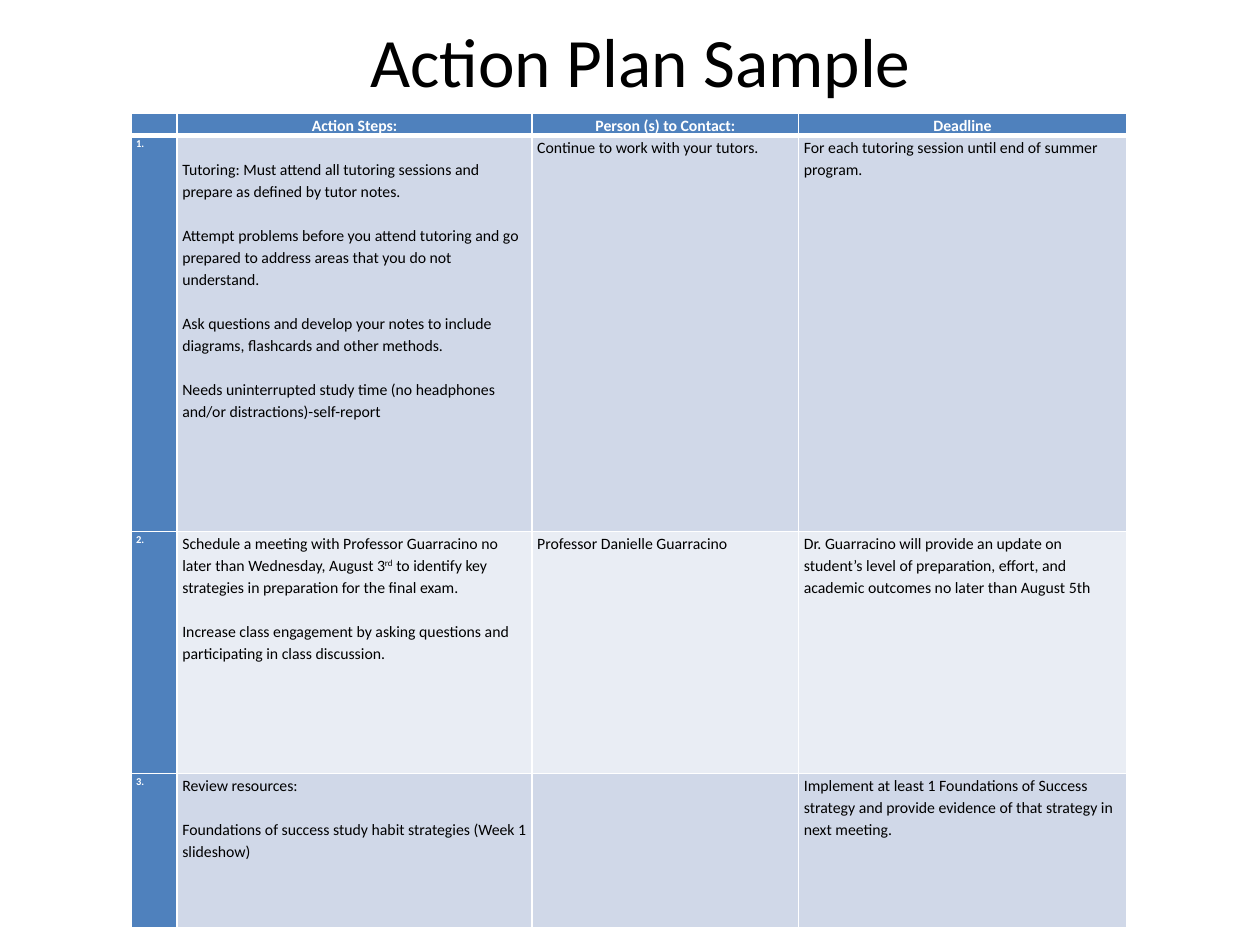
from lxml import etree
from pptx import Presentation
from pptx import util as u
from pptx.dml.color import RGBColor
from pptx.enum import text
from pptx.oxml.ns import qn

Pt = u.Pt
BLACK = RGBColor(0x00, 0x00, 0x00)
WHITE = RGBColor(0xFF, 0xFF, 0xFF)
BLUE = RGBColor(0x4F, 0x81, 0xBD)
BAND_DARK = RGBColor(0xD0, 0xD8, 0xE8)
BAND_LIGHT = RGBColor(0xE9, 0xED, 0xF4)

FONT = "Calibri"
LINE = 12.57  # height of one 9 pt line at 1.15 spacing
COL_WIDTHS = (26.4, 202.8, 152.4, 187.2)
ROW_LINES = (1, 18, 11, 7)

HEADERS = ("", "Action Steps:", "Person (s) to Contact:", "Deadline")
# Each cell is a list of paragraphs; a tuple holds runs, every second one superscript.
STEPS = (
    (["Tutoring: Must attend all tutoring sessions and prepare as defined by tutor notes.",
      "Attempt problems before you attend tutoring and go prepared to address areas "
      "that you do not understand.",
      "Ask questions and develop your notes to include diagrams, flashcards and other methods.",
      "Needs uninterrupted study time (no headphones and/or distractions)-self-report"],
     ["Continue to work with your tutors."],
     ["For each tutoring session until end of summer program."]),
    ([("Schedule a meeting with Professor Guarracino no later than Wednesday, August 3", "rd",
       " to identify key strategies in preparation for the final exam."),
      "Increase class engagement by asking questions and participating in class discussion."],
     ["Professor Danielle Guarracino"],
     ["Dr. Guarracino will provide an update on student’s level of preparation, effort, "
      "and academic outcomes no later than August 5th"]),
    (["Review resources:",
      "Foundations of success study habit strategies (Week 1 slideshow)"],
     [""],
     ["Implement at least 1 Foundations of Success strategy and provide evidence of "
      "that strategy in next meeting."]),
)

HEAD = dict(size=Pt(9), bold=True, color=WHITE)
NUMBER = dict(size=Pt(6), bold=True, color=WHITE)
BODY = dict(size=Pt(9), bold=False, color=BLACK)


def add_run(p, words, size, bold, color, raised=False):
    r = p.add_run()
    r.text = words
    for name, value in dict(name=FONT, size=size, bold=bold).items():
        setattr(r.font, name, value)
    r.font.color.rgb = color
    if raised:
        r.font._element.set("baseline", "30000")


def add_title(s, x, y, w, h):
    tf = s.shapes.add_textbox(Pt(x), Pt(y), Pt(w), Pt(h)).text_frame
    for name, value in dict(word_wrap=True, vertical_anchor=text.MSO_ANCHOR.MIDDLE,
                            margin_top=0, margin_bottom=0).items():
        setattr(tf, name, value)
    p = tf.paragraphs[0]
    p.alignment = text.PP_ALIGN.CENTER
    add_run(p, "Action Plan Sample", Pt(39.6), False, BLACK)


def add_borders(cell, **widths):
    """Draw white cell borders; widths in points by side: L, R, T, B."""
    tc_pr = cell._tc.get_or_add_tcPr()
    for side in "LRTB":
        ln = etree.SubElement(tc_pr, qn("a:ln" + side), w=str(Pt(widths.get(side, 1))))
        fill = etree.SubElement(ln, qn("a:solidFill"))
        etree.SubElement(fill, qn("a:srgbClr"), val=str(WHITE))


def fill_cell(cell, paragraphs, style, color, align=text.PP_ALIGN.LEFT, top=0, **borders):
    add_borders(cell, **borders)
    cell.fill.solid()
    cell.fill.fore_color.rgb = color
    for name, value in dict(margin_left=Pt(3), margin_right=Pt(3),
                            margin_top=Pt(top), margin_bottom=0).items():
        setattr(cell, name, value)
    tf = cell.text_frame
    for i, content in enumerate(paragraphs):
        p = tf.add_paragraph() if i else tf.paragraphs[0]
        p.alignment = align
        p.line_spacing = 1.15
        if i:
            p.space_before = Pt(LINE)
        if not content:
            etree.SubElement(p._p, qn("a:endParaRPr"), sz="900")
            continue
        runs = (content,) if isinstance(content, str) else content
        for j, words in enumerate(runs):
            add_run(p, words, **style, raised=j % 2 == 1)


def add_plan(s, x, y):
    heights = [n * LINE for n in ROW_LINES]
    table = s.shapes.add_table(len(heights), len(COL_WIDTHS), Pt(x), Pt(y),
                               Pt(sum(COL_WIDTHS)), Pt(sum(heights))).table
    for col, width in zip(table.columns, COL_WIDTHS):
        col.width = Pt(width)
    for row, height in zip(table.rows, heights):
        row.height = Pt(height)
    for c, words in enumerate(HEADERS):
        fill_cell(table.cell(0, c), [words], HEAD, BLUE, text.PP_ALIGN.CENTER, B=3)
    for r, step in enumerate(STEPS, 1):
        rule = 3 if r == 1 else 1
        fill_cell(table.cell(r, 0), [f"{r}."], NUMBER, BLUE, T=rule)
        for c, paragraphs in enumerate(step, 1):
            fill_cell(table.cell(r, c), paragraphs, BODY, BAND_DARK if r % 2 else BAND_LIGHT,
                      top=LINE if (r, c) == (1, 1) else 0, T=rule)


def main():
    prs = Presentation()
    prs.slide_width, prs.slide_height = Pt(720), Pt(540)
    s = prs.slides.add_slide(prs.slide_layouts[6])
    add_title(s, 131, 17.5, 470, 33)
    add_plan(s, 74.8, 65)
    prs.save("out.pptx")


if __name__ == "__main__":
    main()
